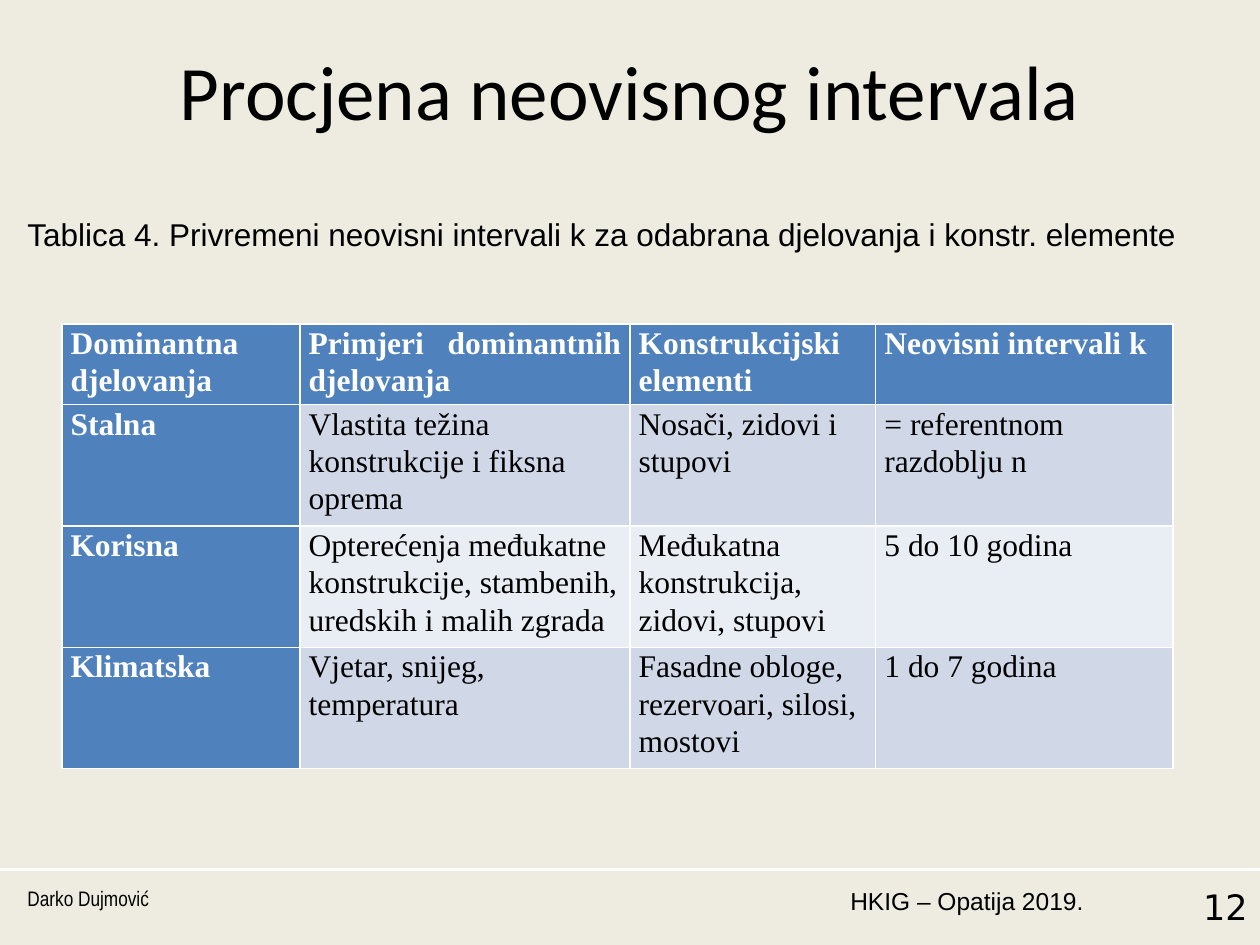
from lxml.etree import SubElement
from pptx import Presentation
from pptx.dml.color import RGBColor
from pptx.enum.shapes import MSO_CONNECTOR
from pptx.enum.text import MSO_ANCHOR, PP_ALIGN
from pptx.oxml.ns import qn
from pptx.util import Inches, Pt

PAPER = RGBColor(0xEE, 0xEC, 0xE1)
WHITE = RGBColor(0xFF, 0xFF, 0xFF)
BLACK = RGBColor(0, 0, 0)
BLUE = RGBColor(0x4F, 0x81, 0xBD)
BANDS = [RGBColor(0xE9, 0xED, 0xF4), RGBColor(0xD0, 0xD8, 0xE8)]

deck = Presentation()
deck.slide_width, deck.slide_height = Inches(10), Inches(7.5)
slide = deck.slides.add_slide(deck.slide_layouts[6])
slide.background.fill.solid()
slide.background.fill.fore_color.rgb = PAPER


def write(frame, text, face, size, align, color=BLACK, bold=False):
    """Put one styled run in the first paragraph and return that paragraph."""
    frame.word_wrap = True
    para = frame.paragraphs[0]
    para.alignment = align
    run = para.add_run()
    run.text = text
    run.font.name, run.font.size = face, Pt(size)
    run.font.color.rgb, run.font.bold = color, bold
    return para


# Footer rule
rule = slide.shapes.add_connector(
    MSO_CONNECTOR.STRAIGHT, 0, Inches(6.9), deck.slide_width, Inches(6.9))
rule.line.color.rgb, rule.line.width = WHITE, Pt(1.5)
SubElement(rule._element.spPr, qn("a:effectLst"))

# Title, caption and footer
LEFT, MID, RIGHT = PP_ALIGN.LEFT, PP_ALIGN.CENTER, PP_ALIGN.RIGHT
FOOT = 6.98
caption = "Tablica 4. Privremeni neovisni intervali k za odabrana djelovanja i konstr. elemente"
for left, top, width, height, text, face, size, align in [
    (0.5, 0.3, 9, 1.25, "Procjena neovisnog intervala", "Calibri", 44, MID),
    (0.12, 1.66, 9.47, 0.4, caption, "Arial", 18, LEFT),
    (0.12, FOOT, 2.17, 0.52, "Darko Dujmović", "Arial Narrow", 12, LEFT),
    (6.57, FOOT, 2.13, 0.52, "HKIG – Opatija 2019.", "Arial", 14, RIGHT),
    (8.78, FOOT, 1.22, 0.52, "12", "DejaVu Sans", 20, RIGHT),
]:
    box = slide.shapes.add_textbox(*map(Inches, (left, top, width, height)))
    write(box.text_frame, text, face, size, align)

# Table: the default style draws the white borders
rows = [
    ["Dominantna djelovanja", "Primjeri dominantnih djelovanja",
     "Konstrukcijski elementi", "Neovisni intervali k"],
    ["Stalna", "Vlastita težina konstrukcije i fiksna oprema",
     "Nosači, zidovi i stupovi", "= referentnom razdoblju n"],
    ["Korisna", "Opterećenja međukatne konstrukcije, stambenih, uredskih i malih zgrada",
     "Međukatna konstrukcija, zidovi, stupovi", "5 do 10 godina"],
    ["Klimatska", "Vjetar, snijeg, temperatura",
     "Fasadne obloge, rezervoari, silosi, mostovi", "1 do 7 godina"],
]
widths = [1.89, 2.62, 1.95, 2.36]
heights = [0.64] + [0.96] * 3
table = slide.shapes.add_table(
    len(rows), len(widths), Inches(0.49), Inches(2.57),
    Inches(sum(widths)), Inches(sum(heights))).table
table.first_col = True
for col, width in zip(table.columns, widths):
    col.width = Inches(width)
for r, (row, height) in enumerate(zip(rows, heights)):
    table.rows[r].height = Inches(height)
    for c, text in enumerate(row):
        head = r == 0 or c == 0
        cell = table.cell(r, c)
        cell.fill.solid()
        cell.fill.fore_color.rgb = BLUE if head else BANDS[r % 2]
        cell.margin_left = cell.margin_right = Inches(0.07)
        cell.margin_top = cell.margin_bottom = 0
        cell.vertical_anchor = MSO_ANCHOR.TOP
        para = write(cell.text_frame, text, "Times New Roman", 18,
                     PP_ALIGN.JUSTIFY if head else LEFT,
                     WHITE if head else BLACK, head)
        para.line_spacing = 1.07

deck.save("out.pptx")
